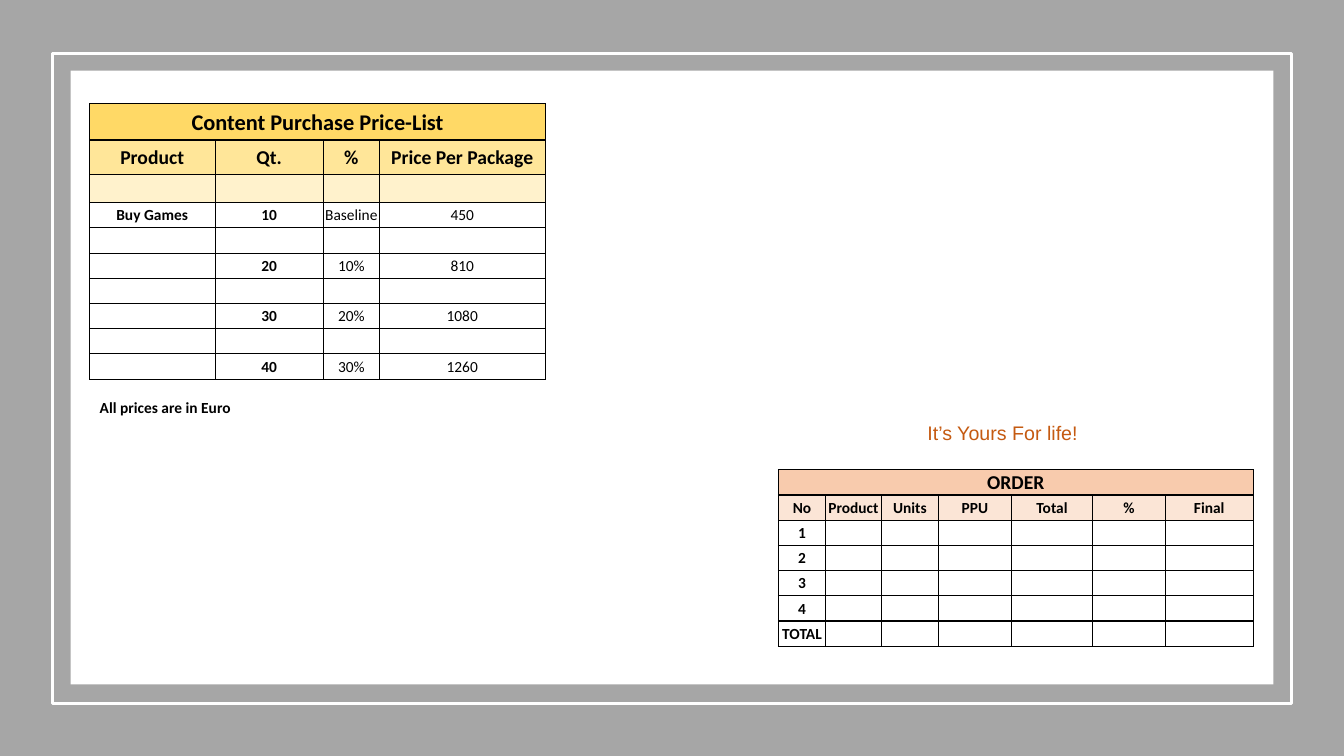
import pptx
import pptx.util
import pptx.dml.color
import pptx.enum.shapes
import pptx.enum.text
import pptx.oxml.ns
from lxml import etree

Inches = pptx.util.Inches
Pt = pptx.util.Pt
ALIGN = pptx.enum.text.PP_ALIGN
MIDDLE = pptx.enum.text.MSO_ANCHOR.MIDDLE
COLORS = {
    "gray": "A6A6A6", "white": "FFFFFF", "black": "000000", "rust": "C55A11",
    "gold": "FFD966", "sand": "FFE699", "cream": "FFF2CC",
    "peach": "F8CBAD", "blush": "FBE5D6",
}
PRICES = [
    ["Content Purchase Price-List", "", "", ""],
    ["Product", "Qt.", "%", "Price Per Package"],
    [""] * 4,
    ["Buy Games", "10", "Baseline", "450"],
    [""] * 4,
    ["", "20", "10%", "810"],
    [""] * 4,
    ["", "30", "20%", "1080"],
    [""] * 4,
    ["", "40", "30%", "1260"],
]
ORDER = [
    ["ORDER"] + [""] * 6,
    ["No", "Product", "Units", "PPU", "Total", "%", "Final"],
] + [[name] + [""] * 6 for name in ("1", "2", "3", "4", "TOTAL")]


def rgb(name):
    return pptx.dml.color.RGBColor.from_string(COLORS[name])


def tag(name):
    return pptx.oxml.ns.qn("a:" + name)


def apply(item, form):
    for key, value in form.items():
        setattr(item, key, value)


def paint(item, color):
    if color:
        item.fill.solid()
        item.fill.fore_color.rgb = rgb(color)
    else:
        item.fill.background()


def add_panel(slide, box, fill=None, line=None):
    kind = pptx.enum.shapes.MSO_SHAPE.RECTANGLE
    panel = slide.shapes.add_shape(kind, *map(Inches, box))
    panel.shadow.inherit = False
    paint(panel, fill)
    if line:
        panel.line.color.rgb = rgb(line)
        panel.line.width = Pt(2)
    else:
        panel.line.fill.background()


def write(para, text, color, form):
    run = para.add_run()
    run.text = text
    apply(run.font, form)
    run.font.color.rgb = rgb(color)


def add_label(slide, box, text, color, form):
    frame = slide.shapes.add_textbox(*map(Inches, box)).text_frame
    frame.word_wrap = True
    write(frame.paragraphs[0], text, color, form)


def set_edges(cell, widths):
    props = cell._tc.get_or_add_tcPr()
    for spot, (side, width) in enumerate(zip("LRTB", widths)):
        edge = etree.Element(tag("ln" + side), w=str(int(Pt(width))))
        fill = etree.SubElement(edge, tag("solidFill"))
        etree.SubElement(fill, tag("srgbClr"), val=COLORS["black"])
        props.insert(spot, edge)


def fill_cell(cell, text, size, bold, fill):
    apply(cell, {
        "margin_left": Inches(0.01), "margin_right": Inches(0.01),
        "margin_top": Inches(0.01), "margin_bottom": 0,
        "vertical_anchor": MIDDLE,
    })
    paint(cell, fill)
    para = cell.text_frame.paragraphs[0]
    para.alignment = ALIGN.CENTER
    if text:
        form = {"name": "Calibri", "size": Pt(size), "bold": bold}
        write(para, text, "black", form)
    else:
        etree.SubElement(para._p, tag("endParaRPr"), sz=str(size * 100))


def add_grid(slide, spot, cols, rows, data, sizes, fills, bold, edges):
    box = (*spot, sum(cols), sum(rows))
    frame = slide.shapes.add_table(len(rows), len(cols), *map(Inches, box))
    table = frame.table
    apply(table, {"first_row": False, "horz_banding": False})
    for col, width in zip(table.columns, cols):
        col.width = Inches(width)
    for row, height in zip(table.rows, rows):
        row.height = Inches(height)
    for i, line in enumerate(data):
        for j, text in enumerate(line):
            cell = table.cell(i, j)
            fill_cell(cell, text, sizes.get(i, 11), bold(i, j), fills.get(i))
            set_edges(cell, edges(i, j))
    table.cell(0, 0).merge(table.cell(0, len(cols) - 1))


def price_edges(i, j):
    left = 1 if j == 0 else 0.25
    right = 1 if j == 3 and i < 2 else 0.25
    top = 1 if i < 3 else 0.5
    base = 1 if i < 2 else 0.5
    return left, right, top, base


def main():
    deck = pptx.Presentation()
    apply(deck, {"slide_width": Inches(13.33), "slide_height": Inches(7.5)})
    slide = deck.slides.add_slide(deck.slide_layouts[6])
    add_panel(slide, (0, 0, 13.33, 7.5), "gray")
    add_panel(slide, (0.52, 0.53, 12.29, 6.45), line="white")
    add_panel(slide, (0.7, 0.7, 11.93, 6.09), "white")
    add_label(slide, (9.1, 4.13, 3.32, 0.34), "It’s Yours For life!", "rust",
              {"name": "Arial", "size": Pt(14)})
    add_label(slide, (0.89, 3.9, 2.42, 0.29), "All prices are in Euro", "black",
              {"name": "Calibri", "size": Pt(11), "bold": True})
    add_grid(slide, (0.89, 1.03), [1.24, 1.08, 0.55, 1.65],
             [0.36, 0.34, 0.28] + [0.25] * 7, PRICES, {0: 16, 1: 14},
             {0: "gold", 1: "sand", 2: "cream"},
             lambda i, j: i < 2 or j < 2, price_edges)
    add_grid(slide, (7.72, 4.66), [0.47, 0.55, 0.57, 0.72, 0.81, 0.72, 0.87],
             [0.25] * 7, ORDER, {0: 14}, {0: "peach", 1: "blush"},
             lambda i, j: True, lambda i, j: (1, 1, 1, 1))
    deck.save("out.pptx")


if __name__ == "__main__":
    main()
